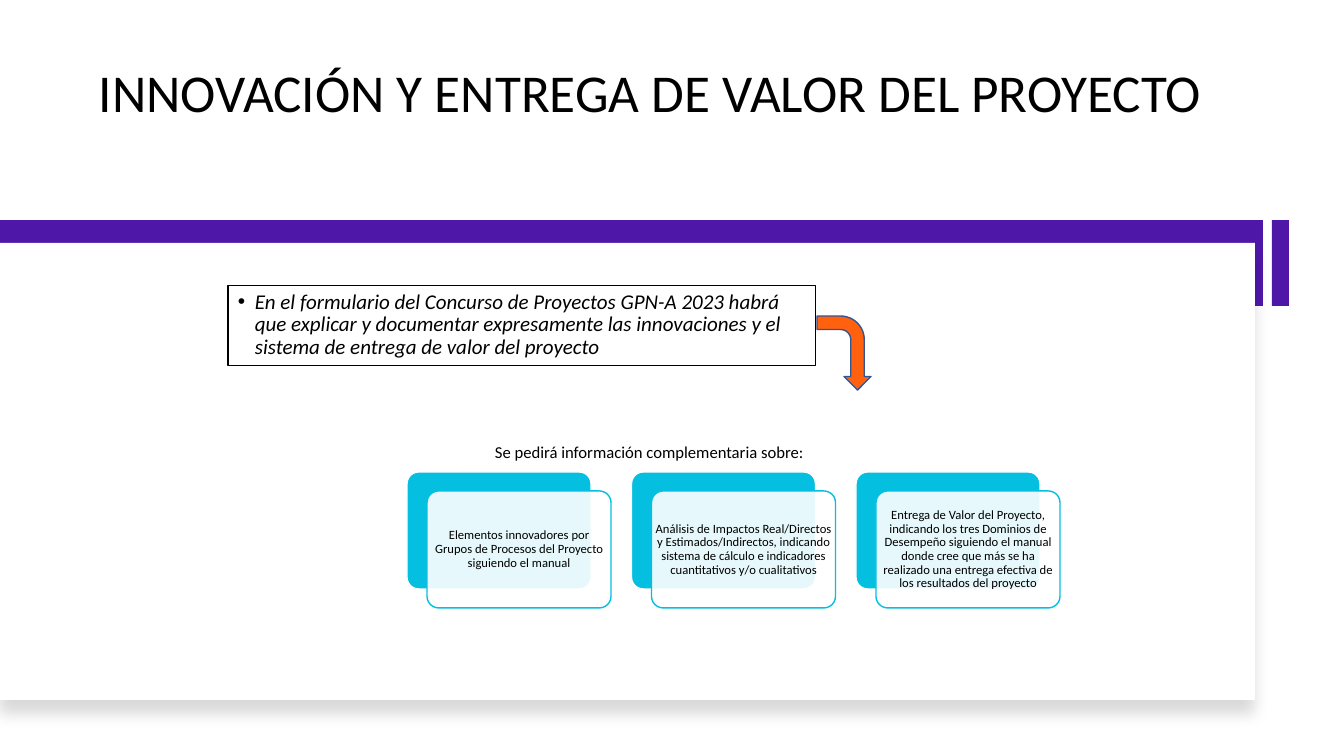
from pptx import Presentation, util as u
from pptx.dml.color import RGBColor
from pptx.enum import shapes, text
from pptx.oxml import parse_xml
from pptx.oxml.ns import nsdecls, qn
from lxml import etree

PX = 914400 / 100.8
PURPLE = RGBColor(0x4F, 0x17, 0xA8)
CYAN = RGBColor(0x05, 0xBF, 0xE0)
ORANGE = RGBColor(0xFF, 0x61, 0x0F)
NAVY = RGBColor(0x32, 0x54, 0x91)
WHITE = RGBColor(0xFF, 0xFF, 0xFF)
BLACK = RGBColor(0, 0, 0)

TOPICS = [
    "Elementos innovadores por Grupos de Procesos del Proyecto siguiendo el manual",
    "Análisis de Impactos Real/Directos y Estimados/Indirectos, indicando "
    "sistema de cálculo e indicadores cuantitativos y/o cualitativos",
    "Entrega de Valor del Proyecto, indicando los tres Dominios de Desempeño "
    "siguiendo el manual donde cree que más se ha realizado una entrega "
    "efectiva de los resultados del proyecto",
]


def px(length):
    return u.Emu(round(length * PX))


def add_block(slide, kind, box, fill=None, line=None, weight=1):
    block = slide.shapes.add_shape(kind, *map(px, box))
    block.shadow.inherit = False
    if fill is None:
        block.fill.background()
    else:
        block.fill.solid()
        block.fill.fore_color.rgb = fill
    if line is None:
        block.line.fill.background()
    else:
        block.line.color.rgb = line
        block.line.width = u.Pt(weight)
    return block


def write(frame, wording, size, anchor=text.MSO_ANCHOR.TOP,
          align=text.PP_ALIGN.LEFT, spacing=0.9, wrap=True):
    frame.word_wrap = wrap
    frame.vertical_anchor = anchor
    paragraph = frame.paragraphs[0]
    paragraph.alignment = align
    paragraph.line_spacing = spacing
    run = paragraph.add_run()
    run.text = wording
    run.font.size = u.Pt(size)
    run.font.name = "Calibri"
    run.font.color.rgb = BLACK
    return paragraph, run


def add_title(slide, box):
    title = slide.shapes.add_textbox(*map(px, box))
    write(title.text_frame, "INNOVACIÓN Y ENTREGA DE VALOR DEL PROYECTO", 38,
          anchor=text.MSO_ANCHOR.BOTTOM)


def add_backdrop(slide, box):
    left, top, width, height = box
    rect = shapes.MSO_SHAPE.RECTANGLE
    add_block(slide, rect, (left + width - 17, top, 17, 86), PURPLE)
    add_block(slide, rect, (left, top, width - 26, 86), PURPLE)
    panel = add_block(slide, rect, (left, top + 23, width - 34, height - 23), WHITE)
    effects = panel.element.spPr.find(qn("a:effectLst"))
    effects.append(parse_xml(
        f'<a:outerShdw {nsdecls("a")} blurRad="{u.Pt(11)}" dist="{u.Pt(10)}" '
        'dir="5400000" algn="t" rotWithShape="0">'
        '<a:srgbClr val="000000"><a:alpha val="15000"/></a:srgbClr></a:outerShdw>'))


def add_statement(slide, box):
    left, top, width, height = box
    statement = add_block(slide, shapes.MSO_SHAPE.RECTANGLE, box, line=BLACK, weight=0.75)
    paragraph, run = write(
        statement.text_frame,
        "En el formulario del Concurso de Proyectos GPN-A 2023 habrá que explicar "
        "y documentar expresamente las innovaciones y el sistema de entrega de "
        "valor del proyecto", 15)
    run.font.italic = True
    properties = paragraph._p.get_or_add_pPr()
    properties.set("marL", str(px(17)))
    properties.set("indent", str(-px(17)))
    etree.SubElement(properties, qn("a:buFont")).set("typeface", "Arial")
    etree.SubElement(properties, qn("a:buChar")).set("char", "•")
    arrow = add_block(slide, shapes.MSO_SHAPE.BENT_ARROW,
                      (left + width - 9, top + 40, 74, 54), ORANGE, NAVY)
    arrow.rotation = 90


def add_topic(slide, box, wording):
    left, top, width, height = box
    rounded = shapes.MSO_SHAPE.ROUNDED_RECTANGLE
    back = add_block(slide, rounded, box, CYAN, WHITE)
    front = add_block(slide, rounded, (left + 20, top + 19, width, height), WHITE, CYAN)
    for card in (back, front):
        card.adjustments[0] = 0.1
    color = front.element.spPr.find(qn("a:solidFill"))[0]
    etree.SubElement(color, qn("a:alpha")).set("val", "90000")
    frame = front.text_frame
    frame.margin_left = frame.margin_right = 0
    frame.margin_top = frame.margin_bottom = 0
    write(frame, wording, 9, text.MSO_ANCHOR.MIDDLE, text.PP_ALIGN.CENTER)


def add_topics(slide, box):
    left, top, width, height = box
    heading = slide.shapes.add_textbox(*map(px, (left + 78, top + 1, 333, 30)))
    write(heading.text_frame, "Se pedirá información complementaria sobre:", 11.9,
          spacing=1.0, wrap=False)
    card_width = 184
    pitch = (width - 20 - card_width) / (len(TOPICS) - 1)
    for index, topic in enumerate(TOPICS):
        add_topic(slide, (left + index * pitch, top + 36, card_width, height - 55), topic)


def main():
    deck = Presentation()
    deck.slide_width, deck.slide_height = px(1344), px(756)
    slide = deck.slides.add_slide(deck.slide_layouts[6])
    add_title(slide, (89, 43, 1173, 86))
    add_backdrop(slide, (0, 220, 1289, 480))
    add_statement(slide, (228, 286, 588, 80))
    add_topics(slide, (407, 436, 653, 172))
    deck.save("out.pptx")


if __name__ == "__main__":
    main()
